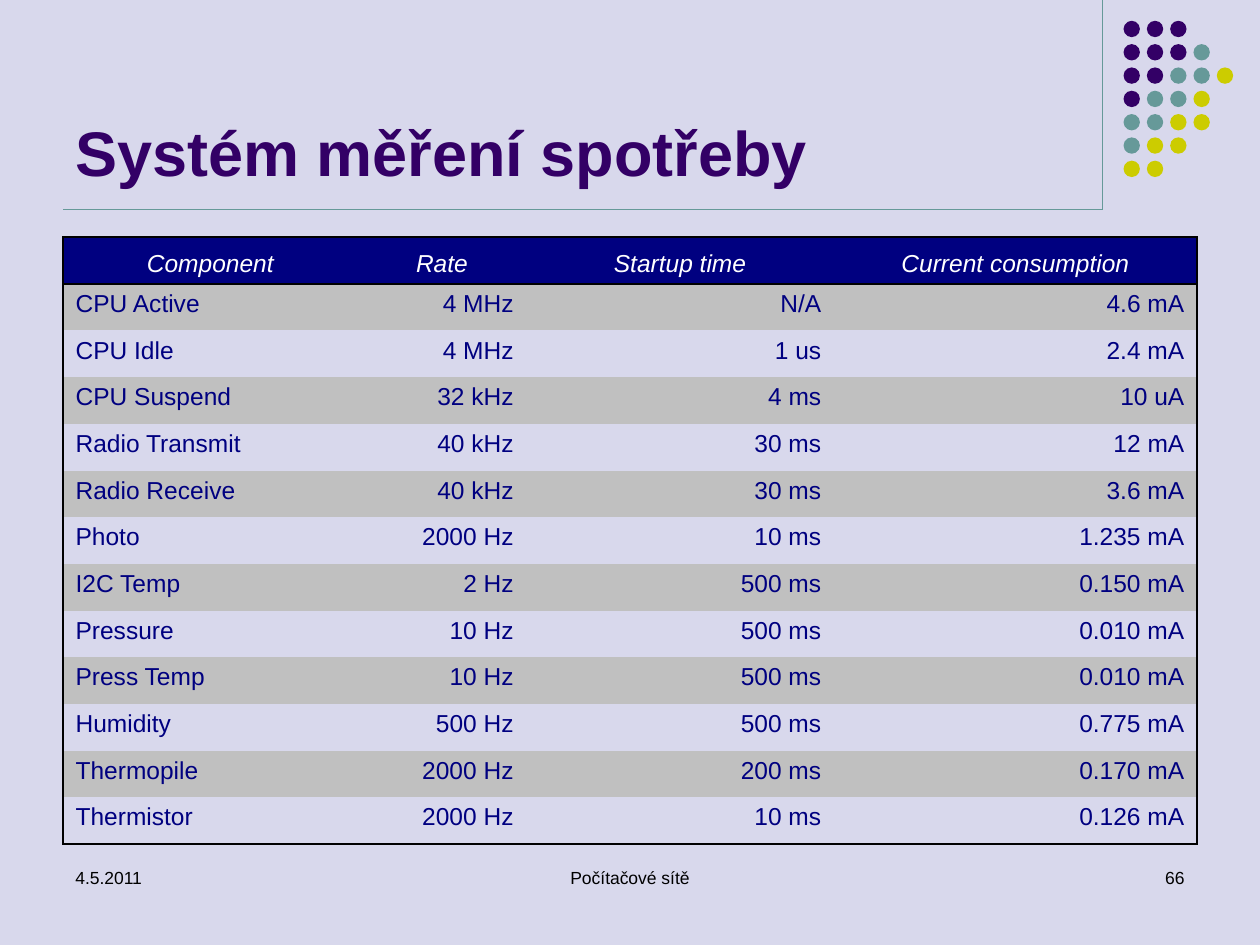
from lxml.etree import SubElement
from pptx import Presentation
from pptx.dml.color import RGBColor
from pptx.enum.shapes import MSO_CONNECTOR, MSO_SHAPE
from pptx.enum.text import MSO_ANCHOR as Anchor, PP_ALIGN as Align
from pptx.oxml.ns import qn
from pptx.util import Cm, Pt

FONT = "Arial"
BACKGROUND = RGBColor(0xD8, 0xD8, 0xEC)
PURPLE = RGBColor(0x33, 0x00, 0x66)
TEAL = RGBColor(0x66, 0x99, 0x99)
YELLOW = RGBColor(0xCC, 0xCC, 0x00)
NAVY = RGBColor(0x00, 0x00, 0x80)
SILVER = RGBColor(0xC0, 0xC0, 0xC0)
WHITE = RGBColor(0xFF, 0xFF, 0xFF)
BLACK = RGBColor(0x00, 0x00, 0x00)

HEADER = ["Component", "Rate", "Startup time", "Current consumption"]
MEASUREMENTS = [
    ["CPU Active", "4 MHz", "N/A", "4.6 mA"],
    ["CPU Idle", "4 MHz", "1 us", "2.4 mA"],
    ["CPU Suspend", "32 kHz", "4 ms", "10 uA"],
    ["Radio Transmit", "40 kHz", "30 ms", "12 mA"],
    ["Radio Receive", "40 kHz", "30 ms", "3.6 mA"],
    ["Photo", "2000 Hz", "10 ms", "1.235 mA"],
    ["I2C Temp", "2 Hz", "500 ms", "0.150 mA"],
    ["Pressure", "10 Hz", "500 ms", "0.010 mA"],
    ["Press Temp", "10 Hz", "500 ms", "0.010 mA"],
    ["Humidity", "500 Hz", "500 ms", "0.775 mA"],
    ["Thermopile", "2000 Hz", "200 ms", "0.170 mA"],
    ["Thermistor", "2000 Hz", "10 ms", "0.126 mA"],
]
COLUMN_WIDTHS = [5.94, 3.4, 6.2, 7.32]
TABLE_LEFT, TABLE_TOP, TABLE_HEIGHT = 1.27, 4.78, 12.24
NO_STYLE = "{2D5ABB26-0587-4C30-8999-92F81FD0307C}"

# One letter per dot: P purple, T teal, Y yellow
DOT_ROWS = ["PPP", "PPPT", "PPTTY", "PTTY", "TTYY", "TYY", "YY"]
DOT_COLORS = {"P": PURPLE, "T": TEAL, "Y": YELLOW}
DOT_LEFT, DOT_TOP, DOT_PITCH, DOT_SIZE = 22.65, 0.42, 0.47, 0.33

RULES = [(22.22, 0, 22.22, 4.23), (1.27, 4.23, 22.22, 4.23)]

FOOTER_FORMAT = {"size": Pt(10), "color": BLACK}
TITLE_FORMAT = {"size": Pt(36), "color": PURPLE, "bold": True}
HEADER_FORMAT = {"size": Pt(14), "color": WHITE, "italic": True}
BODY_FORMAT = {"size": Pt(14), "color": NAVY}

# text, (left, top, width, height), alignment, anchor, format
TEXTS = [
    ("4.5.2011", (1.27, 17.36, 5.93, 1.27), Align.LEFT, Anchor.TOP, FOOTER_FORMAT),
    ("Počítačové sítě", (8.68, 17.36, 8.04, 1.27), Align.CENTER, Anchor.TOP, FOOTER_FORMAT),
    ("66", (18.2, 17.36, 5.93, 1.27), Align.RIGHT, Anchor.TOP, FOOTER_FORMAT),
    ("Systém měření spotřeby", (1.27, 0.33, 20.95, 3.6), Align.LEFT, Anchor.BOTTOM, TITLE_FORMAT),
]


def write(tf, text, align, fmt):
    p = tf.paragraphs[0]
    p.alignment = align
    r = p.add_run()
    r.text = text
    r.font.name = FONT
    for name, value in fmt.items():
        if name == "color":
            r.font.color.rgb = value
        else:
            setattr(r.font, name, value)


def add_rules(slide):
    for ends in RULES:
        line = slide.shapes.add_connector(MSO_CONNECTOR.STRAIGHT, *map(Cm, ends))
        line.line.color.rgb = TEAL
        line.line.width = Pt(0.75)
        SubElement(line._element.spPr, qn("a:effectLst"))


def add_dots(slide):
    for row, letters in enumerate(DOT_ROWS):
        for col, letter in enumerate(letters):
            sp = slide.shapes.add_shape(
                MSO_SHAPE.OVAL,
                Cm(DOT_LEFT + col * DOT_PITCH), Cm(DOT_TOP + row * DOT_PITCH),
                Cm(DOT_SIZE), Cm(DOT_SIZE))
            sp.shadow.inherit = False
            sp.fill.solid()
            sp.fill.fore_color.rgb = DOT_COLORS[letter]
            sp.line.fill.background()


def add_texts(slide):
    for text, box, align, anchor, fmt in TEXTS:
        tf = slide.shapes.add_textbox(*map(Cm, box)).text_frame
        tf.word_wrap = True
        tf.vertical_anchor = anchor
        write(tf, text, align, fmt)


def set_borders(cell, drawn):
    """Draw the sides flagged in drawn; must run before the cell is filled."""
    tc_pr = cell._tc.get_or_add_tcPr()
    for side in ("lnL", "lnR", "lnT", "lnB"):
        ln = SubElement(tc_pr, qn(f"a:{side}"), w=str(Pt(1)))
        if drawn[side]:
            fill = SubElement(ln, qn("a:solidFill"))
            SubElement(fill, qn("a:srgbClr"), val=str(BLACK))
        else:
            SubElement(ln, qn("a:noFill"))


def add_measurements(slide):
    rows = [HEADER] + MEASUREMENTS
    last_row, last_col = len(rows) - 1, len(HEADER) - 1
    table = slide.shapes.add_table(
        len(rows), len(HEADER), Cm(TABLE_LEFT), Cm(TABLE_TOP),
        Cm(sum(COLUMN_WIDTHS)), Cm(TABLE_HEIGHT)).table
    table.first_row = table.horz_banding = False
    table._tbl.tblPr.find(qn("a:tableStyleId")).text = NO_STYLE
    for column, width in zip(table.columns, COLUMN_WIDTHS):
        column.width = Cm(width)
    for i, values in enumerate(rows):
        table.rows[i].height = Cm(TABLE_HEIGHT / len(rows))
        for j, value in enumerate(values):
            cell = table.cell(i, j)
            set_borders(cell, {"lnL": j == 0, "lnR": j == last_col,
                               "lnT": i <= 1, "lnB": i in (0, last_row)})
            if i == 0:
                align, fmt = Align.CENTER, HEADER_FORMAT
                cell.vertical_anchor = Anchor.BOTTOM
            else:
                align, fmt = (Align.RIGHT if j else Align.LEFT), BODY_FORMAT
            if i == 0 or i % 2:
                cell.fill.solid()
                cell.fill.fore_color.rgb = SILVER if i else NAVY
            else:
                cell.fill.background()
            write(cell.text_frame, value, align, fmt)


def main():
    prs = Presentation()
    prs.slide_width, prs.slide_height = Cm(25.4), Cm(19.05)
    slide = prs.slides.add_slide(prs.slide_layouts[6])
    slide.background.fill.solid()
    slide.background.fill.fore_color.rgb = BACKGROUND
    add_rules(slide)
    add_dots(slide)
    add_texts(slide)
    add_measurements(slide)
    prs.save("out.pptx")


if __name__ == "__main__":
    main()
